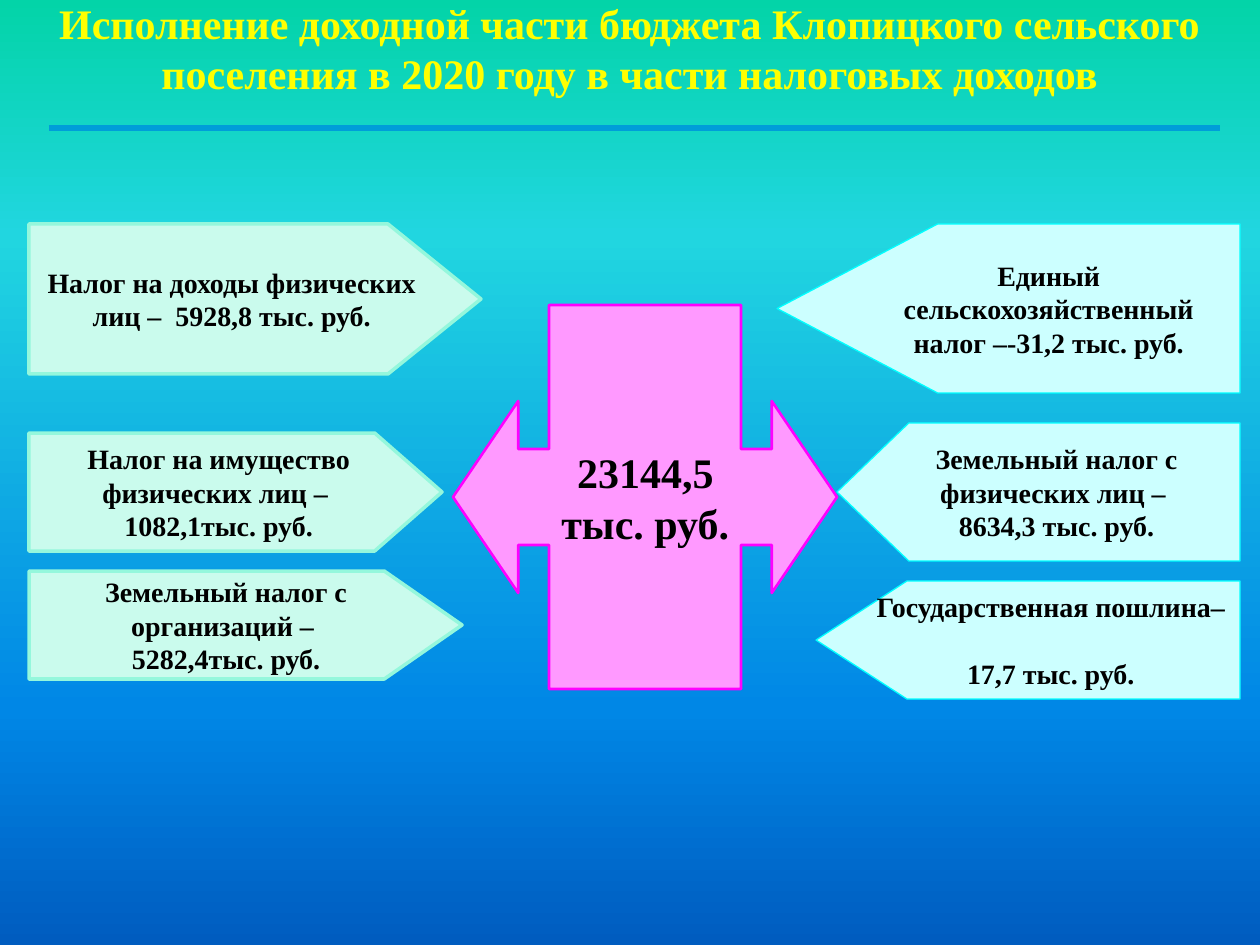
from lxml.etree import SubElement
from pptx import Presentation
from pptx.dml.color import RGBColor
from pptx.enum.shapes import MSO_CONNECTOR, MSO_SHAPE
from pptx.enum.text import MSO_ANCHOR, PP_ALIGN
from pptx.oxml.ns import qn
from pptx.util import Pt

PX = 914400 / 126
LEFT_EDGE, RIGHT_EDGE = 29, 1240


def emu(*lengths):
    return [round(length * PX) for length in lengths]


def write_text(shape, lines, size, color, anchor=MSO_ANCHOR.MIDDLE):
    frame = shape.text_frame
    frame.text = "\n".join(lines)
    frame.word_wrap = True
    frame.vertical_anchor = anchor
    for para in frame.paragraphs:
        para.alignment = PP_ALIGN.CENTER
        for span in para.runs:
            span.font.name = "Times New Roman"
            span.font.size = Pt(size)
            span.font.bold = True
            span.font.color.rgb = RGBColor.from_string(color)


deck = Presentation()
deck.slide_width, deck.slide_height = emu(1260, 945)
page = deck.slides.add_slide(deck.slide_layouts[6])

# Background gradient, top to bottom
background = page.background.fill
background.gradient()
background.gradient_angle = 270
stops = page._element.find(".//" + qn("a:gsLst"))
for old_stop in list(stops):
    stops.remove(old_stop)
for percent, color in [(0, "03D4A8"), (25, "21D6E0"), (75, "0087E6"), (100, "005CBF")]:
    stop = SubElement(stops, qn("a:gs"), pos=str(percent * 1000))
    SubElement(stop, qn("a:srgbClr"), val=color)

# Title and rule
title = page.shapes.add_textbox(*emu(29, 20, 1201, 78))
write_text(title, ["Исполнение доходной части бюджета Клопицкого сельского "
                   "поселения в 2020 году в части налоговых доходов"],
           24, "FFFF00", MSO_ANCHOR.BOTTOM)
title.text_frame.margin_left = title.text_frame.margin_right = 0
title.text_frame.margin_bottom = 0

rule = page.shapes.add_connector(MSO_CONNECTOR.STRAIGHT, *emu(49, 128, 1220, 128))
rule.line.color.rgb = RGBColor.from_string("009DD9")
rule.line.width = Pt(3.75)
SubElement(rule._element.spPr, qn("a:effectLst"))

# Total in the middle: the callout lies on its side, its text stays upright
total = page.shapes.add_shape(MSO_SHAPE.UP_DOWN_ARROW_CALLOUT, *emu(453, 305, 384, 384))
total.rotation = 270
for index, value in enumerate([0.25, 0.25, 0.17, 0.5]):
    total.adjustments[index] = value
write_text(total, ["23144,5", "тыс. руб."], 24, "000000")
total.text_frame.word_wrap = False
total.text_frame._txBody.bodyPr.set("vert", "eaVert")
total.shadow.inherit = False
total.fill.solid()
total.fill.fore_color.rgb = RGBColor.from_string("FF99FF")
total.line.color.rgb = RGBColor.from_string("FF00FF")
total.line.width = Pt(1.5)

# Taxes: side, top, width, height, point, lines
taxes = [
    ("left", 224, 452, 150, 0.62, ["Налог на доходы физических лиц –  5928,8 тыс. руб."]),
    ("left", 433, 413, 118, 0.57, ["Налог на имущество физических лиц – ", "1082,1тыс. руб."]),
    ("left", 571, 433, 108, 0.72, ["Земельный налог с организаций – ", "5282,4тыс. руб."]),
    ("right", 224, 463, 169, 0.95, ["Единый сельскохозяйственный налог –-31,2 тыс. руб."]),
    ("right", 423, 403, 138, 0.52, ["Земельный налог с физических лиц – ", "8634,3 тыс. руб."]),
    ("right", 581, 424, 118, 0.77, ["Государственная пошлина–", "17,7 тыс. руб."]),
]
styles = {"left": ("CAFBED", "94F7DC", 2), "right": ("CCFFFF", "00FFFF", 0.75)}
for side, top, width, height, point, lines in taxes:
    left = LEFT_EDGE if side == "left" else RIGHT_EDGE - width
    plate = page.shapes.add_shape(MSO_SHAPE.PENTAGON, *emu(left, top, width, height))
    plate.adjustments[0] = point
    write_text(plate, lines, 16, "000000")
    if side == "right":
        plate.rotation = 180
        plate.text_frame._txBody.bodyPr.set("rot", "10800000")
    fill, outline, weight = styles[side]
    plate.shadow.inherit = False
    plate.fill.solid()
    plate.fill.fore_color.rgb = RGBColor.from_string(fill)
    plate.line.color.rgb = RGBColor.from_string(outline)
    plate.line.width = Pt(weight)

# The state duty, last in the list, has its amount one line lower
plate.text_frame.paragraphs[1].space_before = Pt(19)

deck.save("out.pptx")
